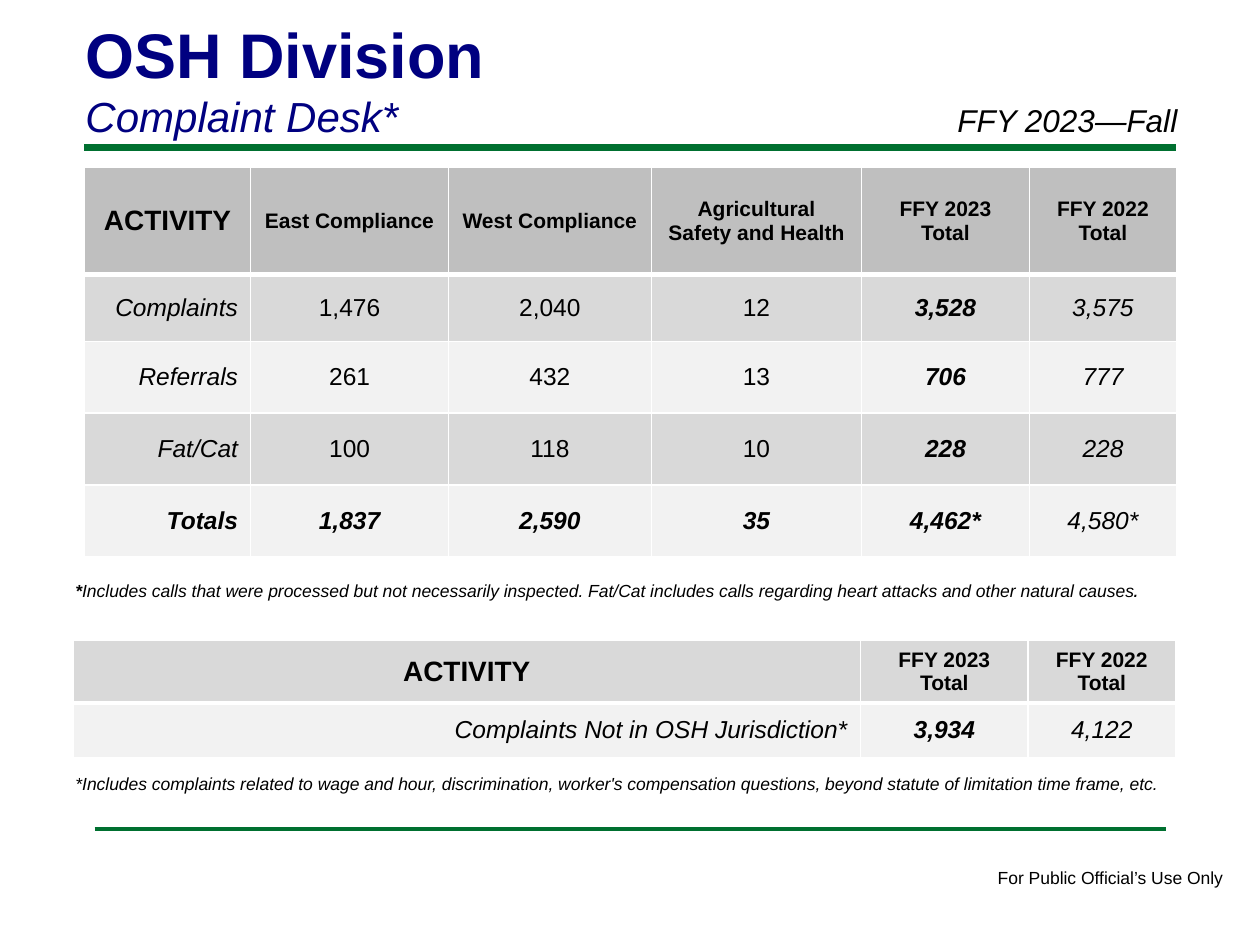
from dataclasses import dataclass

from lxml import etree
from pptx import Presentation
from pptx.dml.color import RGBColor
from pptx.enum import text
from pptx.oxml import ns
from pptx.util import Inches, Pt


@dataclass(frozen=True)
class Theme:
    font: str = "Arial"
    ink: str = "000000"
    navy: str = "000080"
    green: str = "007030"
    white: str = "FFFFFF"
    head: str = "BFBFBF"
    dark: str = "D9D9D9"
    light: str = "F2F2F2"
    title: int = 36
    subtitle: int = 24
    period: int = 18
    activity: int = 16
    body: int = 14
    label: int = 12
    note: int = 10


THEME = Theme()
BOTTOM = text.MSO_ANCHOR.BOTTOM


def style(font, size, color=THEME.ink, bold=False, italic=False):
    font.name = THEME.font
    font.size = Pt(size)
    font.bold = bold
    font.italic = italic
    font.color.rgb = RGBColor.from_string(color)


def add_rule(slide, left, right, y, weight):
    rule = slide.shapes.add_connector(1, Inches(left), Inches(y), Inches(right), Inches(y))
    rule.line.color.rgb = RGBColor.from_string(THEME.green)
    rule.line.width = Pt(weight)
    etree.SubElement(rule._element.spPr, ns.qn("a:effectLst"))


def add_text(slide, box, paragraphs, anchor=BOTTOM, wrap=True):
    frame = slide.shapes.add_textbox(*map(Inches, box)).text_frame
    frame.word_wrap = wrap
    frame.vertical_anchor = anchor
    for index, (words, look) in enumerate(paragraphs):
        paragraph = frame.add_paragraph() if index else frame.paragraphs[0]
        paragraph.text = words
        style(paragraph.font, **look)


def add_mixed_note(slide, box, pieces):
    frame = slide.shapes.add_textbox(*map(Inches, box)).text_frame
    frame.word_wrap = True
    for words, size, bold in pieces:
        run = frame.paragraphs[0].add_run()
        run.text = words
        style(run.font, size, bold=bold, italic=True)


def set_borders(cell, bottom):
    properties = cell._tc.get_or_add_tcPr()
    widths = {"lnL": 1, "lnR": 1, "lnT": 1, "lnB": bottom}
    for position, (side, width) in enumerate(widths.items()):
        edge = etree.Element(ns.qn(f"a:{side}"), w=str(Pt(width)))
        fill = etree.SubElement(edge, ns.qn("a:solidFill"))
        etree.SubElement(fill, ns.qn("a:srgbClr"), val=THEME.white)
        properties.insert(position, edge)


def cell_look(row, column, rows, columns):
    if row == 0:
        return {"size": THEME.label if column else THEME.activity, "bold": True}
    totals = row == 4
    current, previous = column == columns - 2, column == columns - 1
    return {
        "size": THEME.body,
        "bold": current or (totals and not previous),
        "italic": column == 0 or current or previous or totals,
    }


def add_activity_table(slide, left, top, widths, heights, rows, head_fill):
    table = slide.shapes.add_table(
        len(rows), len(widths), Inches(left), Inches(top),
        Inches(sum(widths)), Inches(sum(heights)),
    ).table
    for column, width in zip(table.columns, widths):
        column.width = Inches(width)
    for line, height in zip(table.rows, heights):
        line.height = Inches(height)
    body_fills = (THEME.light, THEME.dark) if len(rows) > 2 else (THEME.light,) * 2
    for r, values in enumerate(rows):
        for c, value in enumerate(values):
            cell = table.cell(r, c)
            cell.text = value
            cell.vertical_anchor = text.MSO_ANCHOR.MIDDLE
            cell.fill.solid()
            cell.fill.fore_color.rgb = RGBColor.from_string(body_fills[r % 2] if r else head_fill)
            set_borders(cell, 1 if r else 3)
            paragraph = cell.text_frame.paragraphs[0]
            row_label = r > 0 and c == 0
            paragraph.alignment = text.PP_ALIGN.RIGHT if row_label else text.PP_ALIGN.CENTER
            style(paragraph.font, **cell_look(r, c, len(rows), len(widths)))


def main():
    deck = Presentation()
    deck.slide_width, deck.slide_height = Inches(10), Inches(7.5)
    slide = deck.slides.add_slide(deck.slide_layouts[6])
    note = {"size": THEME.note, "italic": True}
    year_totals = ["FFY 2023 Total", "FFY 2022 Total"]
    year_widths = [1.33, 1.17]

    add_rule(slide, 0.67, 9.33, 1.17, 4)
    add_rule(slide, 0.75, 9.25, 6.58, 2)
    add_text(slide, (7.82, 6.83, 2.01, 0.27),
             [("For Public Official’s Use Only", {"size": THEME.note})], wrap=False)
    add_mixed_note(slide, (0.5, 4.53, 8.83, 0.5), [
        ("*", THEME.note, True),
        ("Includes calls that were processed but not necessarily inspected. "
         "Fat/Cat includes calls regarding heart attacks and other natural causes",
         THEME.note, False),
        (".", THEME.label, False),
    ])
    add_text(slide, (0.58, 0.06, 8.25, 1.11), [
        ("OSH Division", {"size": THEME.title, "color": THEME.navy, "bold": True}),
        ("Complaint Desk*", {"size": THEME.subtitle, "color": THEME.navy, "italic": True}),
    ])
    add_activity_table(slide, 0.58, 5.08, [6.25, *year_widths], [0.5, 0.43], [
        ["ACTIVITY", *year_totals],
        ["Complaints Not in OSH Jurisdiction*", "3,934", "4,122"],
    ], THEME.dark)
    add_text(slide, (0.5, 6.08, 8.92, 0.27), [
        ("*Includes complaints related to wage and hour, discrimination, worker's "
         "compensation questions, beyond statute of limitation time frame, etc.", note),
    ])
    add_activity_table(
        slide, 0.67, 1.33, [1.32, 1.57, 1.61, 1.67, *year_widths],
        [0.85, 0.53, 0.57, 0.57, 0.57], [
            ["ACTIVITY", "East Compliance", "West Compliance",
             "Agricultural Safety and Health", *year_totals],
            ["Complaints", "1,476", "2,040", "12", "3,528", "3,575"],
            ["Referrals", "261", "432", "13", "706", "777"],
            ["Fat/Cat", "100", "118", "10", "228", "228"],
            ["Totals", "1,837", "2,590", "35", "4,462*", "4,580*"],
        ], THEME.head)
    add_text(slide, (7.5, 0.75, 2.5, 0.4),
             [("FFY 2023—Fall", {"size": THEME.period, "italic": True})])
    deck.save("out.pptx")


if __name__ == "__main__":
    main()
